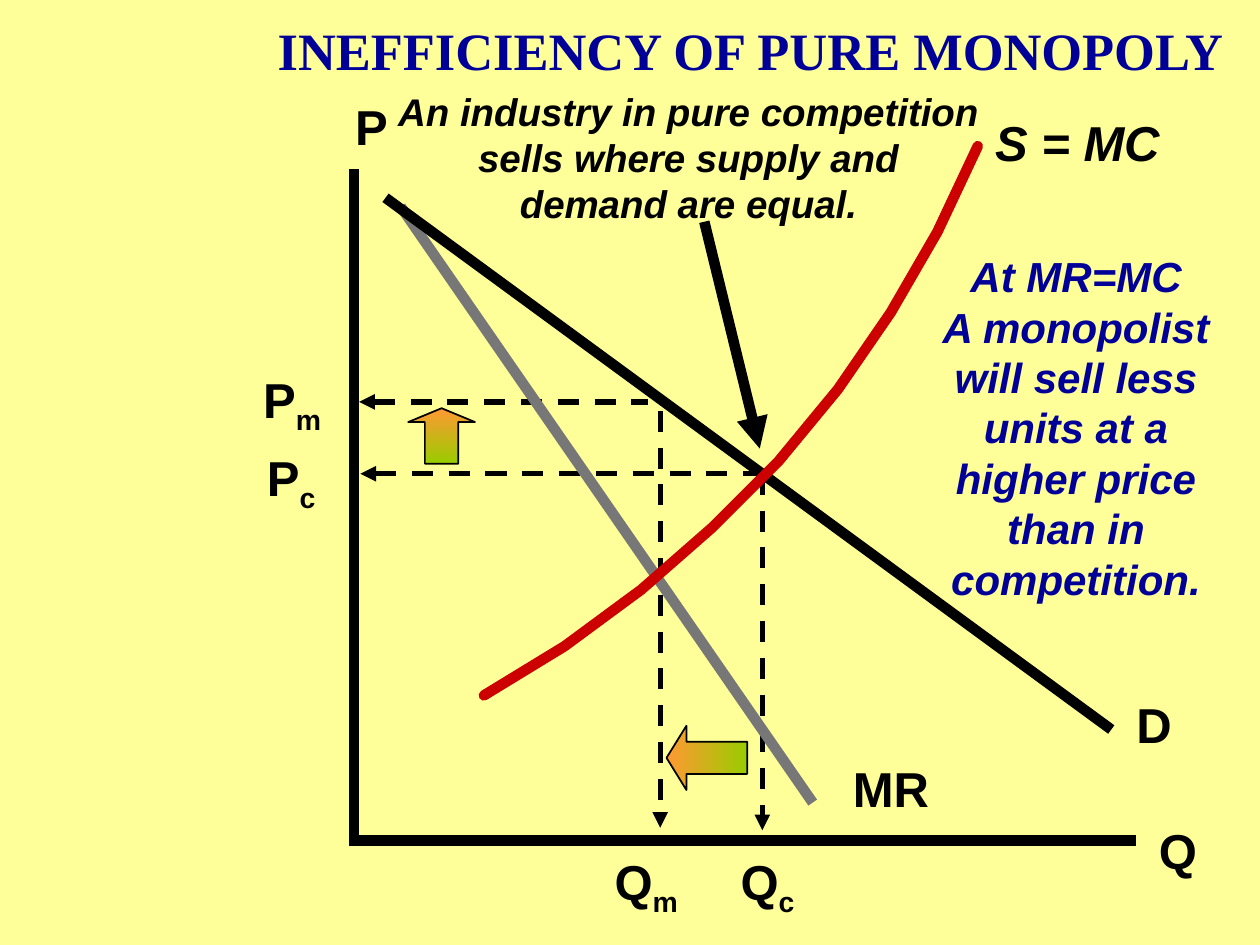
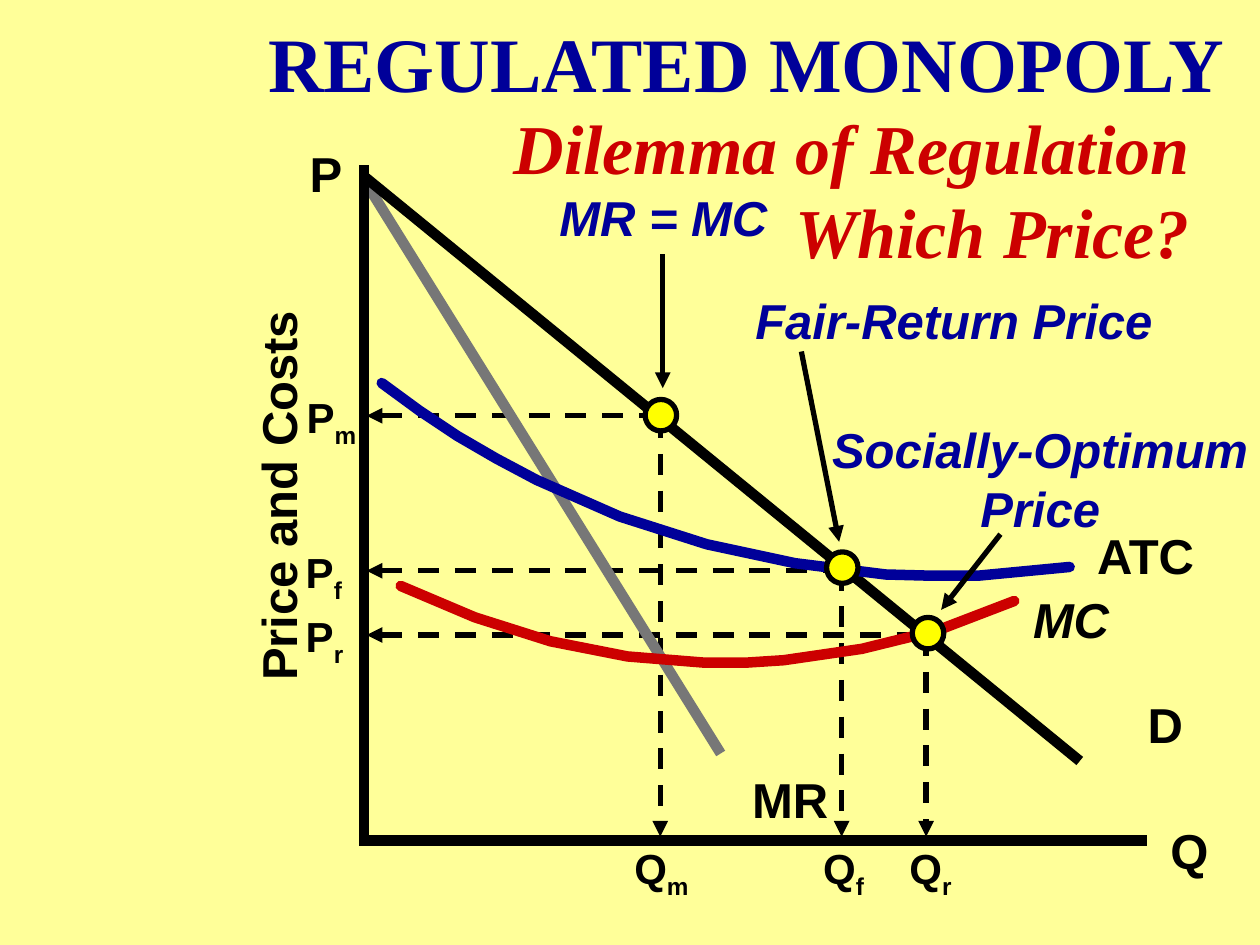
from pptx import Presentation
from pptx.dml.color import RGBColor
from pptx.enum.dml import MSO_LINE
from pptx.enum.shapes import MSO_CONNECTOR, MSO_SHAPE
from pptx.enum.text import MSO_ANCHOR, MSO_AUTO_SIZE, PP_ALIGN
from pptx.oxml.ns import qn
from pptx.util import Inches, Pt
from lxml.etree import SubElement

BLACK, GRAY, NAVY, RED = "000000", "777777", "000099", "CC0000"
CREAM, GOLD, PEACH, LIME = "FFFF99", "FFFF00", "FF9933", "99CC00"
LEFT, MID, RIGHT = PP_ALIGN.LEFT, PP_ALIGN.CENTER, PP_ALIGN.RIGHT
paint = RGBColor.from_string

deck = Presentation()
deck.slide_width, deck.slide_height = Inches(10), Inches(7.5)
cell = deck.slide_width / 100
ground = deck.slide_master.background.fill
ground.solid()
ground.fore_color.rgb = paint(CREAM)


def write(box, at, words, size=28, hue=BLACK, face="Arial", slant=False, align=LEFT):
    box.left, box.top, box.width, box.height = [round(n * cell) for n in at]
    frame = box.text_frame
    frame.word_wrap = False
    frame.auto_size = MSO_AUTO_SIZE.SHAPE_TO_FIT_TEXT
    frame.vertical_anchor = MSO_ANCHOR.TOP
    for rank, row in enumerate(words.split("\n")):
        para = frame.add_paragraph() if rank else frame.paragraphs[0]
        para.alignment = align
        for part, piece in enumerate(row.split("_")):
            run = para.add_run()
            run.text = piece
            font = run.font
            font.name, font.size, font.bold, font.italic = face, Pt(size), True, slant
            font.color.rgb = paint(hue)
            if part:
                font._element.set("baseline", "-25000")


def draw(page, x1, y1, x2, y2, width=6, hue=BLACK, dash=False, tip=None):
    ends = [round(n * cell) for n in (x1, y1, x2, y2)]
    link = page.shapes.add_connector(MSO_CONNECTOR.STRAIGHT, *ends)
    link.line.width = Pt(width)
    link.line.color.rgb = paint(hue)
    if dash:
        link.line.dash_style = MSO_LINE.DASH
    if tip:
        SubElement(link.line._ln, qn("a:" + tip), type="triangle")
    SubElement(link._element.spPr, qn("a:effectLst"))


one, two = [deck.slides.add_slide(deck.slide_layouts[5]) for _ in range(2)]

for page, at, words, size in (
    (one, (20.7, 0.9, 77.8, 6), "INEFFICIENCY OF PURE MONOPOLY", 30),
    (two, (19.8, 0.7, 78.9, 8.3), "REGULATED MONOPOLY", 44),
):
    write(page.shapes.title, at, words, size, NAVY, "Times New Roman", align=MID)

for page, axis, stop, y, x, top, foot in (
    (one, 28.5, 51.4, 31.9, 52.4, 32.6, 65.7),
    (one, 28.6, 60.4, 37.6, 60.5, 37.6, 65.9),
    (two, 29.1, 52.1, 33, 52.4, 33.1, 66.4),
    (two, 29.1, 66.6, 45.3, 66.8, 45.2, 66.4),
    (two, 29.1, 73.7, 50.4, 73.5, 50.4, 66.4),
):
    draw(page, axis, y, stop, y, 3, dash=True, tip="headEnd")
    draw(page, x, top, x, foot, 3, dash=True, tip="tailEnd")

draw(one, 31.8, 16.4, 64.5, 63.7, hue=GRAY)
draw(one, 30.6, 15.7, 88.2, 57.9)
draw(two, 29.1, 14.6, 57.2, 59.8, hue=GRAY)
draw(two, 28.9, 14, 85.7, 60.4)

for page, x, top in ((one, 28.1, 13.4), (two, 28.9, 13.1)):
    draw(page, x, top, x, 67.1)
    draw(page, x - 0.4, 66.7, x + 62.1, 66.7)

for page, hue, dots in (
    (one, RED, ((38.4, 55.2), (44.8, 51.3), (50.9, 46.8), (56.5, 41.9), (61.8, 36.6),
                (66.5, 30.9), (70.7, 24.8), (74.4, 18.4), (77.6, 11.6))),
    (two, RED, ((31.8, 46.5), (37.7, 49), (43.7, 50.9), (49.8, 52.1), (56, 52.6), (57.6, 52.6),
                (59.1, 52.6), (62.2, 52.4), (68.4, 51.5), (74.5, 50), (80.5, 47.7))),
    (two, NAVY, ((30.3, 30.4), (33.3, 32.6), (36.3, 34.6), (39.4, 36.4), (42.6, 38.1),
                 (49.2, 41), (56.1, 43.2), (63.1, 44.7), (70.3, 45.6), (74, 45.7),
                 (75.8, 45.7), (77.6, 45.7), (84.9, 45))),
):
    dots = [(x * cell, y * cell) for x, y in dots]
    pen = page.shapes.build_freeform(*dots[0])
    pen.add_line_segments(dots[1:], close=False)
    curve = pen.convert_to_shape()
    curve.shadow.inherit = False
    curve.fill.background()
    curve.line.width = Pt(6)
    curve.line.color.rgb = paint(hue)
    curve.line._ln.set("cap", "rnd")

for page, ends, width in (
    (one, (55.9, 17.6, 60.3, 35.6), 6),
    (two, (52.6, 20.2, 52.6, 30.8), 3),
    (two, (63.6, 27.9, 66.6, 43), 3),
    (two, (79.4, 42.4, 74.7, 48.4), 3),
):
    draw(page, *ends, width, tip="tailEnd")

for kind, at, head, turn in (
    (MSO_SHAPE.UP_ARROW, (32.4, 32.4, 5.3, 4.4), 0.25, 270),
    (MSO_SHAPE.LEFT_ARROW, (52.9, 57.6, 6.4, 5.1), 0.31, 0),
):
    block = one.shapes.add_shape(kind, *[round(n * cell) for n in at])
    block.shadow.inherit = False
    block.adjustments[0], block.adjustments[1] = 0.5, head
    block.fill.gradient()
    block.fill.gradient_angle = turn
    for stop, hue, place in zip(block.fill.gradient_stops, (PEACH, LIME), (0, 1)):
        stop.color.rgb, stop.position = paint(hue), place
    block.line.width = Pt(1)
    block.line.color.rgb = paint(BLACK)

for x, y in ((73.65, 50.25), (66.85, 45.05), (52.45, 32.95)):
    at = (x - 1.25, y - 1.25, 2.5, 2.5)
    dot = two.shapes.add_shape(MSO_SHAPE.OVAL, *[round(n * cell) for n in at])
    dot.shadow.inherit = False
    dot.fill.solid()
    dot.fill.fore_color.rgb = paint(GOLD)
    dot.line.width = Pt(3)
    dot.line.color.rgb = paint(BLACK)

for page, x, y, wide, words in (
    (one, 27.2, 7.2, 4.6, "P"),
    (one, 91, 64.6, 5, "Q"),
    (one, 89.2, 54.6, 4.8, "D"),
    (one, 66.7, 59.7, 8.5, "MR"),
    (one, 20.2, 35, 6, "P_c"),
    (one, 19.9, 28.8, 6.9, "P_m"),
    (one, 57.8, 67.1, 6.5, "Q_c"),
    (one, 47.8, 67.1, 7.3, "Q_m"),
    (two, 23.6, 10.9, 4.6, "P"),
    (two, 91.9, 64.6, 5, "Q"),
    (two, 90.1, 54.6, 4.8, "D"),
    (two, 58.7, 60.6, 8.5, "MR"),
    (two, 86.1, 41.2, 10, "ATC"),
):
    write(page.shapes.add_textbox(0, 0, 0, 0), (x, y, wide, 5.6), words)

for x, y, wide, words in (
    (49.2, 66.4, 6.6, "Q_m"),
    (64.3, 66.4, 5.3, "Q_f"),
    (71.1, 66.4, 5.5, "Q_r"),
    (23.2, 30.6, 6.2, "P_m"),
    (23.2, 42.9, 5, "P_f"),
    (23.2, 48, 5.1, "P_r"),
):
    write(two.shapes.add_textbox(0, 0, 0, 0), (x, y, wide, 5), words, 24, align=MID)

for page, at, words, size, hue, face, align in (
    (one, (78, 8.4, 15.1, 5.6), "S = MC", 28, BLACK, "Arial", LEFT),
    (one, (73.8, 19.4, 23.2, 28.9),
     "At MR=MC\nA monopolist\nwill sell less\nunits at a\nhigher price\nthan in\ncompetition.",
     24, NAVY, "Arial", MID),
    (one, (30.5, 6.5, 48.3, 12),
     "An industry in pure competition\nsells where supply and\ndemand are equal.",
     22, BLACK, "Arial", MID),
    (two, (81, 46.3, 8.5, 5.6), "MC", 28, BLACK, "Arial", LEFT),
    (two, (43.4, 14.4, 18.5, 5.6), "MR = MC", 28, NAVY, "Arial", MID),
    (two, (58.9, 22.6, 33.6, 5.6), "Fair-Return Price", 28, NAVY, "Arial", MID),
    (two, (65, 32.8, 35.1, 10.3), "Socially-Optimum\nPrice", 28, NAVY, "Arial", MID),
    (two, (39.7, 7.8, 55.7, 14.3), "Dilemma of Regulation\nWhich Price?",
     40, RED, "Times New Roman", RIGHT),
):
    write(page.shapes.add_textbox(0, 0, 0, 0), at, words, size, hue, face, True, align)

side = two.shapes.add_textbox(0, 0, 0, 0)
write(side, (6.3, 36.5, 31.4, 5.6), "Price and Costs")
side.rotation = 270

deck.save("out.pptx")
